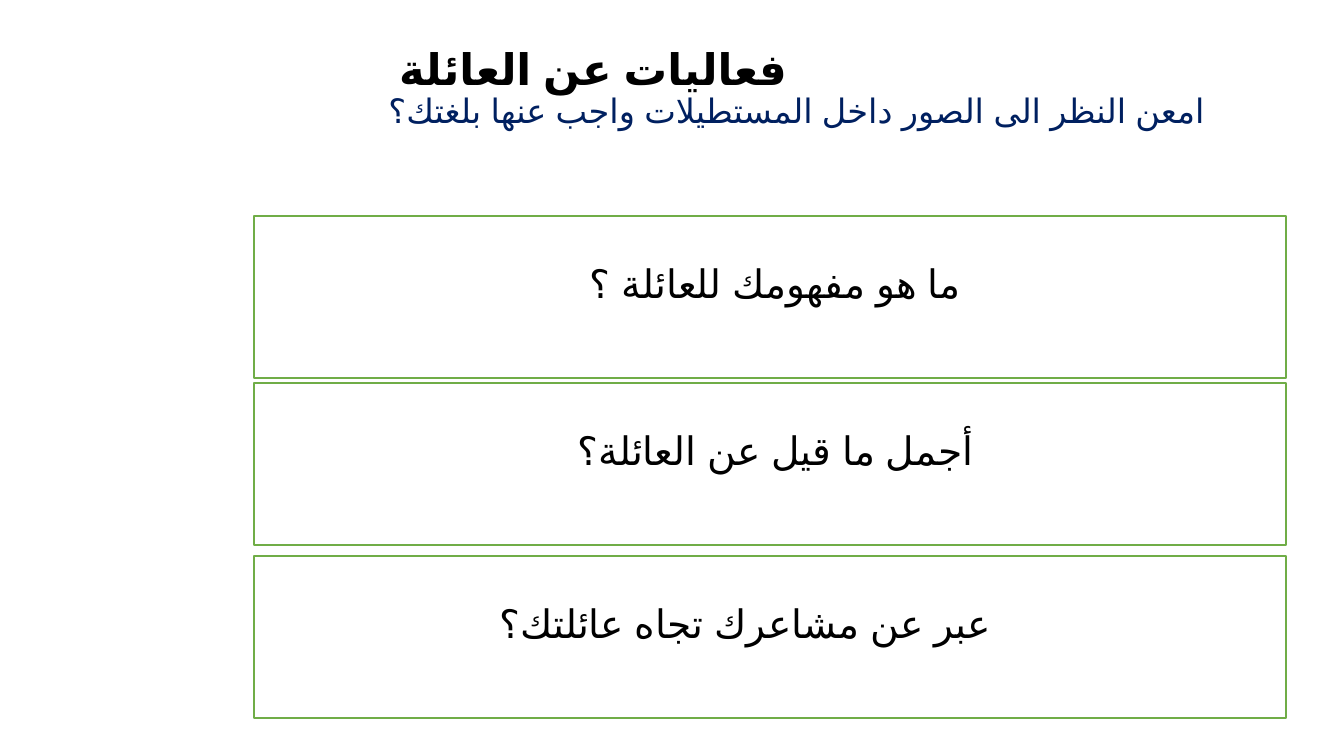
from lxml import etree
from pptx import Presentation
from pptx.dml.color import RGBColor
from pptx.enum.lang import MSO_LANGUAGE_ID
from pptx.enum.shapes import MSO_SHAPE
from pptx.enum.text import MSO_ANCHOR, PP_ALIGN
from pptx.oxml.ns import qn
from pptx.util import Pt

EMU_PER_PX = 914400 / 100.8
RECTANGLE = MSO_SHAPE.RECTANGLE
MIDDLE = MSO_ANCHOR.MIDDLE
RIGHT, CENTER = PP_ALIGN.RIGHT, PP_ALIGN.CENTER
ARABIC = MSO_LANGUAGE_ID.ARABIC
TITLE_ONLY = 5
FONT = "Arial"
COLORS = {"text": "000000", "instruction": "002060", "card": "FFFFFF", "border": "70AD47"}

TITLE_BOX = (140, 0, 1075, 162)
HEADING = "فعاليات عن العائلة"
INSTRUCTION = "امعن النظر الى الصور داخل المستطيلات واجب عنها بلغتك؟"
CARD_LEFT, CARD_WIDTH, CARD_HEIGHT = 254, 1032, 162
# question, top of its card, indent from the right
QUESTIONS = [
    ("ما هو مفهومك للعائلة ؟ ", 216, 0),
    ("أجمل ما قيل عن العائلة؟ ", 383, 0),
    ("عبر عن مشاعرك تجاه عائلتك؟ ", 556, 60),
]


def px(length):
    return round(length * EMU_PER_PX)


def color(name):
    return RGBColor.from_string(COLORS[name])


def set_frame(frame, top, bottom):
    settings = {
        "word_wrap": True, "vertical_anchor": MIDDLE,
        "margin_left": px(10), "margin_right": px(10),
        "margin_top": px(top), "margin_bottom": px(bottom),
    }
    for name, value in settings.items():
        setattr(frame, name, value)


def write_arabic(paragraph, text, size, color_name, align, indent=0, bold=False, spacing=1.0):
    """Write a right-to-left line; indent is measured from its right edge."""
    for name, value in {"alignment": align, "line_spacing": spacing,
                        "space_before": Pt(0)}.items():
        setattr(paragraph, name, value)
    properties = paragraph._p.get_or_add_pPr()
    for name, value in {"rtl": "1", "marL": str(px(indent)), "indent": "0"}.items():
        properties.set(name, value)
    run = paragraph.add_run()
    run.text = text
    for name, value in {"name": FONT, "size": Pt(size), "bold": bold,
                        "language_id": ARABIC}.items():
        setattr(run.font, name, value)
    run.font.color.rgb = color(color_name)
    etree.SubElement(run._r.get_or_add_rPr(), qn("a:cs"), typeface=FONT)


def place(shape, box):
    for name, length in zip(("left", "top", "width", "height"), box):
        setattr(shape, name, px(length))


def add_heading(slide, box):
    title = slide.shapes.title
    place(title, box)
    frame = title.text_frame
    set_frame(frame, top=22, bottom=5)
    write_arabic(frame.paragraphs[0], HEADING, 31, "text", RIGHT,
                 indent=418, bold=True, spacing=0.9)
    write_arabic(frame.add_paragraph(), INSTRUCTION, 24, "instruction", RIGHT, spacing=0.9)


def add_question_card(slide, box, question, indent):
    card = slide.shapes.add_shape(RECTANGLE, *map(px, box))
    card.shadow.inherit = False
    card.fill.solid()
    card.fill.fore_color.rgb = color("card")
    card.line.color.rgb = color("border")
    card.line.width = Pt(1)
    set_frame(card.text_frame, top=5, bottom=34)
    write_arabic(card.text_frame.paragraphs[0], question, 28, "text", CENTER, indent)


def main():
    presentation = Presentation()
    presentation.slide_width, presentation.slide_height = px(1344), px(756)
    slide = presentation.slides.add_slide(presentation.slide_layouts[TITLE_ONLY])
    add_heading(slide, TITLE_BOX)
    for question, top, indent in QUESTIONS:
        add_question_card(slide, (CARD_LEFT, top, CARD_WIDTH, CARD_HEIGHT), question, indent)
    presentation.save("out.pptx")


if __name__ == "__main__":
    main()
